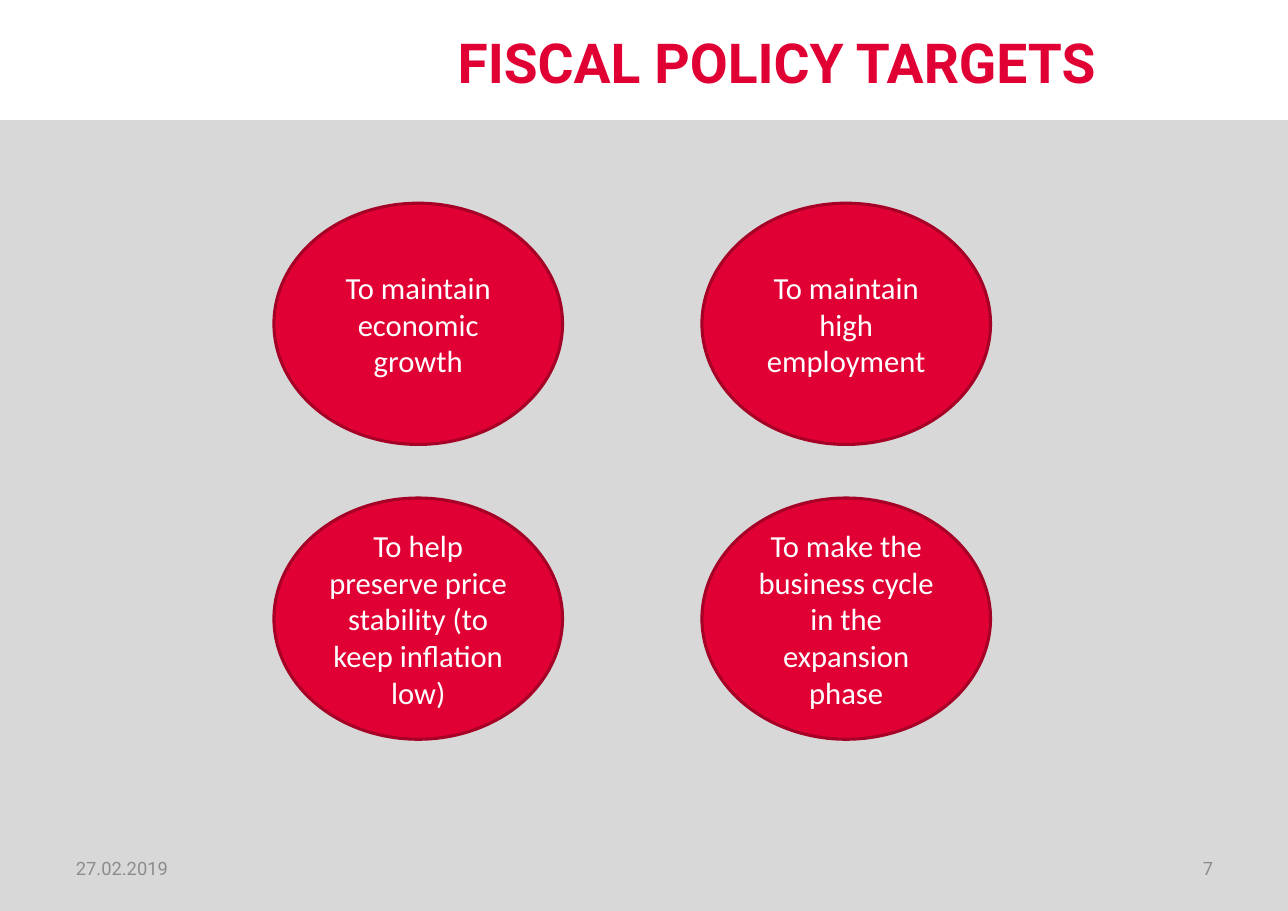
from typing import NamedTuple

from pptx import Presentation
from pptx.dml.color import RGBColor
from pptx.enum.shapes import MSO_SHAPE
from pptx.enum.text import MSO_ANCHOR, MSO_AUTO_SIZE, PP_ALIGN
from pptx.util import Pt

RED, DARK_RED, WHITE = "E00034", "A60026", "FFFFFF"
PANEL_GREY, FOOTER_GREY = "D8D8D8", "8C8C8C"
SLIDE_W, SLIDE_H = 841.68, 595.44


class Style(NamedTuple):
    font: str
    size: float
    color: str
    align: PP_ALIGN
    bold: bool = False


class Target(NamedTuple):
    text: str
    col: int
    row: int


class FooterItem(NamedTuple):
    text: str
    left: float
    align: PP_ALIGN


TITLE_STYLE = Style("Roboto", 36, RED, PP_ALIGN.CENTER, True)
TARGET_STYLE = Style("Calibri", 20, WHITE, PP_ALIGN.CENTER)

# Grid of ellipses
GRID_LEFT, GRID_TOP = 179, 132.8
COL_STEP, ROW_STEP = 279.7, 192.7
ELLIPSE_W, ELLIPSE_H = 188.6, 157.7

TARGETS = [
    Target("To maintain economic growth", 0, 0),
    Target("To maintain high employment", 1, 0),
    Target("To help preserve price stability (to keep inflation low)", 0, 1),
    Target("To make the business cycle in the expansion phase", 1, 1),
]
FOOTER = [
    FooterItem("27.02.2019", 42.5, PP_ALIGN.LEFT),
    FooterItem("7", 603.4, PP_ALIGN.RIGHT),
]


def rgb(value: str) -> RGBColor:
    return RGBColor.from_string(value)


def write(sp, text: str, style: Style) -> None:
    tf = sp.text_frame
    tf.word_wrap = True
    tf.auto_size = MSO_AUTO_SIZE.NONE
    tf.vertical_anchor = MSO_ANCHOR.MIDDLE
    p = tf.paragraphs[0]
    p.alignment = style.align
    r = p.add_run()
    r.text = text
    r.font.name = style.font
    r.font.size = Pt(style.size)
    r.font.bold = style.bold
    r.font.color.rgb = rgb(style.color)


def add_panel(s) -> None:
    top = 78.5
    sp = s.shapes.add_shape(MSO_SHAPE.RECTANGLE, Pt(0), Pt(top),
                            Pt(SLIDE_W), Pt(SLIDE_H - top))
    sp.shadow.inherit = False
    sp.fill.solid()
    sp.fill.fore_color.rgb = rgb(PANEL_GREY)
    sp.line.fill.background()


def add_title(s, text: str) -> None:
    sp = s.shapes.title
    sp.left, sp.top, sp.width, sp.height = Pt(215.3), Pt(14.4), Pt(584.6), Pt(51.8)
    write(sp, text, TITLE_STYLE)


def add_target(s, target: Target) -> None:
    sp = s.shapes.add_shape(
        MSO_SHAPE.OVAL,
        Pt(GRID_LEFT + target.col * COL_STEP),
        Pt(GRID_TOP + target.row * ROW_STEP),
        Pt(ELLIPSE_W), Pt(ELLIPSE_H))
    sp.shadow.inherit = False
    sp.fill.solid()
    sp.fill.fore_color.rgb = rgb(RED)
    sp.line.color.rgb = rgb(DARK_RED)
    sp.line.width = Pt(2)
    write(sp, target.text, TARGET_STYLE)


def add_footer_item(s, item: FooterItem) -> None:
    sp = s.shapes.add_textbox(Pt(item.left), Pt(551.5), Pt(196.5), Pt(31.7))
    write(sp, item.text, Style("Roboto", 12, FOOTER_GREY, item.align))


def main() -> None:
    prs = Presentation()
    prs.slide_width, prs.slide_height = Pt(SLIDE_W), Pt(SLIDE_H)
    s = prs.slides.add_slide(prs.slide_layouts[5])

    # Background and title
    add_panel(s)
    add_title(s, "FISCAL POLICY TARGETS")

    # Four policy targets
    for target in TARGETS:
        add_target(s, target)

    # Date and page number
    for item in FOOTER:
        add_footer_item(s, item)

    prs.save("out.pptx")


if __name__ == "__main__":
    main()
